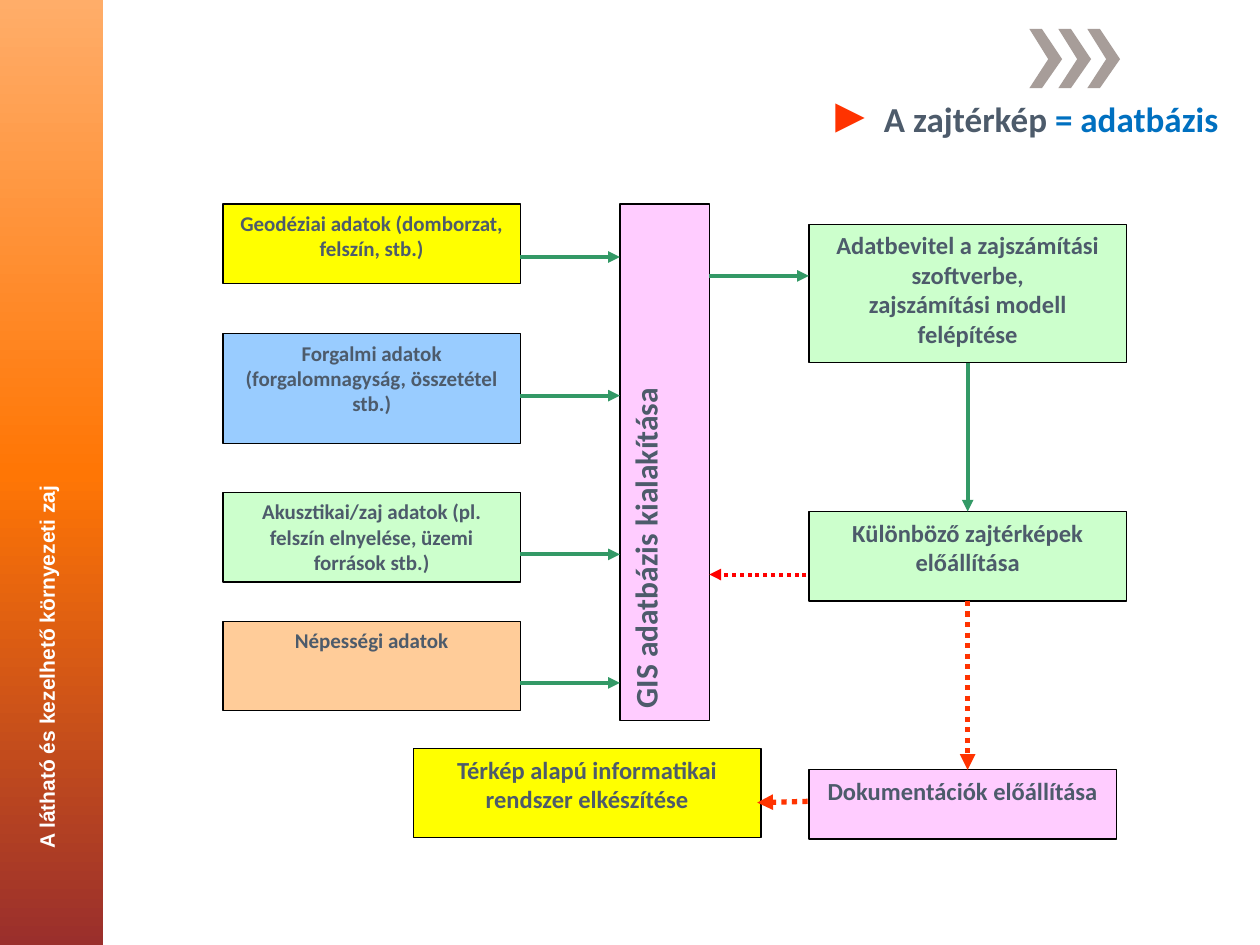
from copy import deepcopy

from pptx import Presentation
from pptx.dml.color import RGBColor
from pptx.enum.dml import MSO_LINE
from pptx.enum.shapes import MSO_CONNECTOR, MSO_SHAPE
from pptx.enum.text import MSO_ANCHOR, MSO_AUTO_SIZE, PP_ALIGN
from pptx.oxml.ns import qn
from pptx.util import Inches, Pt
from lxml.etree import SubElement

THEME = {
    "text": "4D5B6B", "accent": "0070C0", "white": "FFFFFF", "outline": "000000",
    "green": "339966", "orange": "FF3300", "red": "FF0000", "chevron": "A79D99",
    "yellow": "FFFF00", "blue": "99CCFF", "mint": "CCFFCC", "peach": "FFCC99", "pink": "FFCCFF",
    "band": [(0, "FFAD69"), (50, "FF7605"), (100, "9A2F2C")],
    "body": "Calibri", "display": "Arial",
    "small": 12, "medium": 14, "title": 20, "large": 18, "marker": 28,
}

TITLE = [
    ("►", "marker", "display", "orange"),
    (" ", "title", "display", "text"),
    ("A zajtérkép ", "title", "body", "text"),
    ("= adatbázis", "title", "body", "accent"),
]
SIDE_TEXT = "A látható és kezelhető környezeti zaj"
DATABASE = "GIS adatbázis kialakítása"

INPUT_X, INPUT_W = 1.77, 2.36
INPUTS = [
    ("Geodéziai adatok (domborzat, felszín, stb.)", 1.62, 0.63, "yellow", 2.04),
    ("Forgalmi adatok (forgalomnagyság, összetétel stb.)", 2.65, 0.87, "blue", 3.14),
    ("Akusztikai/zaj adatok (pl. felszín elnyelése, üzemi források stb.)", 3.91, 0.71, "mint", 4.4),
    ("Népességi adatok", 4.93, 0.71, "peach", 5.42),
]
DB_X, DB_W = 4.92, 0.71
STEP_X, STEP_W = 6.42, 2.52
STEPS = [
    ("Adatbevitel a zajszámítási szoftverbe,\nzajszámítási modell felépítése",
     (STEP_X, 1.78, STEP_W, 1.1), "mint"),
    ("Különböző zajtérképek előállítása", (STEP_X, 4.06, STEP_W, 0.71), "mint"),
    ("Dokumentációk előállítása", (STEP_X, 6.11, 2.44, 0.55), "pink"),
    ("Térkép alapú informatikai rendszer elkészítése", (3.28, 5.94, 2.76, 0.71), "yellow"),
]
STEP_MID = STEP_X + STEP_W / 2
ARROWS = [((INPUT_X + INPUT_W, y), (DB_X, y), "green", 2.25, False) for *_, y in INPUTS] + [
    ((DB_X + DB_W, 2.19), (STEP_X, 2.19), "green", 2.25, False),
    ((STEP_MID, 2.88), (STEP_MID, 4.06), "green", 2.25, False),
    ((STEP_MID, 4.77), (STEP_MID, 6.11), "orange", 3, True),
    ((6.41, 6.36), (6.01, 6.37), "orange", 3, True),
    ((6.4, 4.56), (DB_X + DB_W, 4.56), "red", 2.25, True),
]
CHEVRON = [(0.1, 0), (0, 0), (0.15, 0.24), (0, 0.47), (0.1, 0.47), (0.26, 0.24)]
CHEVRON_X, CHEVRON_Y, CHEVRON_STEP = 8.17, 0.23, 0.23


def rgb(name):
    return RGBColor.from_string(THEME[name])


def style(r, size, face, color):
    r.font.size = Pt(THEME[size])
    r.font.name = THEME[face]
    r.font.bold = True
    r.font.color.rgb = rgb(color)


def fill_text(tf, text, size, face="body", color="text", align=PP_ALIGN.CENTER):
    tf.word_wrap = True
    tf.text = text
    for p in tf.paragraphs:
        p.alignment = align
        for r in p.runs:
            style(r, size, face, color)


def add_box(s, text, place, fill, size, align=PP_ALIGN.CENTER):
    sp = s.shapes.add_shape(MSO_SHAPE.RECTANGLE, *map(Inches, place))
    sp.shadow.inherit = False
    sp.fill.solid()
    sp.fill.fore_color.rgb = rgb(fill)
    sp.line.color.rgb = rgb("outline")
    sp.line.width = Pt(0.75)
    sp.text_frame.vertical_anchor = MSO_ANCHOR.TOP
    fill_text(sp.text_frame, text, size, align=align)
    return sp


def add_arrow(s, start, end, color, width, dotted):
    c = s.shapes.add_connector(MSO_CONNECTOR.STRAIGHT, *map(Inches, start + end))
    c.line.color.rgb = rgb(color)
    c.line.width = Pt(width)
    if dotted:
        c.line.dash_style = MSO_LINE.ROUND_DOT
    sp_pr = c._element.spPr
    SubElement(sp_pr.find(qn("a:ln")), qn("a:tailEnd"), type="triangle")
    SubElement(sp_pr, qn("a:effectLst"))


def add_band(s):
    sp = s.shapes.add_shape(MSO_SHAPE.RECTANGLE, 0, 0, Inches(0.82), Inches(7.5))
    sp.shadow.inherit = False
    sp.line.fill.background()
    sp.fill.gradient()
    sp.fill.gradient_angle = 270
    stops = sp._element.spPr.find(qn("a:gradFill")).find(qn("a:gsLst"))
    stops.append(deepcopy(stops[-1]))
    for stop, (position, color) in zip(sp.fill.gradient_stops, THEME["band"]):
        stop.position = position / 100
        stop.color.rgb = RGBColor.from_string(color)


def add_chevrons(s):
    for i in range(3):
        left = CHEVRON_X + i * CHEVRON_STEP
        points = [(Inches(left + x), Inches(CHEVRON_Y + y)) for x, y in CHEVRON]
        builder = s.shapes.build_freeform(*points[0])
        builder.add_line_segments(points[1:], close=True)
        sp = builder.convert_to_shape()
        sp.shadow.inherit = False
        sp.fill.solid()
        sp.fill.fore_color.rgb = rgb("chevron")
        sp.line.fill.background()


def add_title(s):
    sp = s.shapes.title
    sp.left, sp.top, sp.width, sp.height = map(Inches, (0.94, 0.7, 8.83, 0.47))
    tf = sp.text_frame
    tf.word_wrap = True
    tf.auto_size = MSO_AUTO_SIZE.NONE
    tf.vertical_anchor = MSO_ANCHOR.TOP
    p = tf.paragraphs[0]
    p.alignment = PP_ALIGN.RIGHT
    p.line_spacing = 0.8
    for text, *look in TITLE:
        r = p.add_run()
        r.text = text
        style(r, *look)


def add_side_text(s):
    sp = s.shapes.add_textbox(*map(Inches, (-1.96, 4.13, 4.66, 0.75)))
    sp.rotation = 270
    sp.text_frame.vertical_anchor = MSO_ANCHOR.MIDDLE
    fill_text(sp.text_frame, SIDE_TEXT, "small", "display", "white", PP_ALIGN.LEFT)


def main():
    prs = Presentation()
    prs.slide_width, prs.slide_height = Inches(10), Inches(7.5)
    s = prs.slides.add_slide(prs.slide_layouts[5])
    add_band(s)
    add_chevrons(s)
    for text, top, height, fill, _ in INPUTS:
        add_box(s, text, (INPUT_X, top, INPUT_W, height), fill, "small")
    database = add_box(s, DATABASE, (DB_X, 1.62, DB_W, 4.1), "pink", "large", PP_ALIGN.LEFT)
    database.text_frame._txBody.bodyPr.set("vert", "vert270")
    for text, place, fill in STEPS:
        add_box(s, text, place, fill, "medium")
    for arrow in ARROWS:
        add_arrow(s, *arrow)
    add_title(s)
    add_side_text(s)
    prs.save("out.pptx")


if __name__ == "__main__":
    main()
